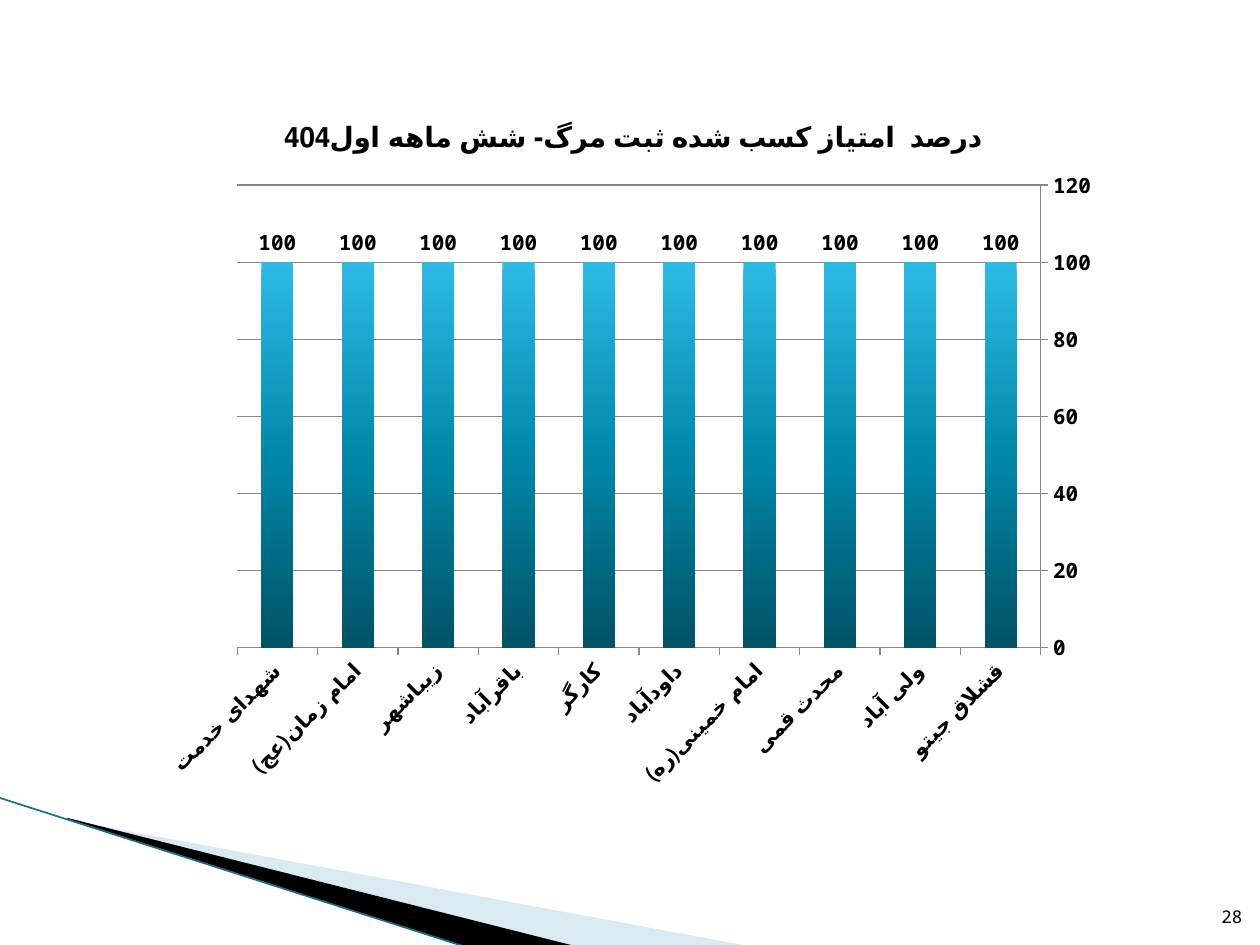
"""Build a slide with a column chart of death registration scores by centre."""
from copy import deepcopy

from lxml import etree
from pptx import Presentation
from pptx.chart.data import CategoryChartData
from pptx.dml.color import RGBColor
from pptx.enum import chart as ch, shapes, text
from pptx.oxml import parse_xml
from pptx.oxml.ns import nsdecls, qn
from pptx.util import Inches, Pt

FONT = "Noto Sans Mono"
HEADING = "درصد  امتیاز کسب شده ثبت مرگ- شش ماهه اول404"
CENTRES = ["قشلاق جیتو", "ولی آباد", "محدث قمی", "امام خمینی(ره)", "داودآباد",
           "کارگر", "باقرآباد", "زیباشهر", "امام زمان(عج)", "شهدای خدمت"]
SCORES = [100] * len(CENTRES)
PAGE = "28"
COLUMN_SHADES = [(0, "2DBBE5"), (0.5, "0088AA"), (1, "005266")]
WEDGES = [
    ([(0.55, 6.51), (5.95, 7.51), (4.56, 7.51), (0.55, 6.5)], "A0CBDC", 40),
    ([(0.53, 6.49), (4.57, 7.51), (3.72, 7.52), (0.54, 6.5)], "000000", 100),
]
EDGE = [(-0.01, 6.33), (3.71, 7.52)]
CHART_BOX = (1.22, 0.76, 7.62, 5.59)
PLOT_SHARES = {"x": 0.087, "y": 0.127, "w": 0.837, "h": 0.657}
PAGE_BOX = (9.46, 7.01, 0.4, 0.4)


def rgb(value):
    """Return the colour for a hex string."""
    return RGBColor.from_string(value)


def style(font, size, bold=False):
    """Apply the shared typeface and colour to a font."""
    font.name, font.size, font.bold = FONT, Pt(size), bold
    font.color.rgb = rgb("000000")


def add_wedge(slide, points, color, opacity):
    """Draw one filled sliver of the corner decoration."""
    start, *rest = [(Inches(x), Inches(y)) for x, y in points]
    builder = slide.shapes.build_freeform(*start)
    builder.add_line_segments(rest, close=True)
    wedge = builder.convert_to_shape()
    wedge.shadow.inherit = False
    wedge.fill.solid()
    wedge.fill.fore_color.rgb = rgb(color)
    wedge.line.fill.background()
    if opacity < 100:
        shade = wedge._element.spPr.find(".//" + qn("a:srgbClr"))
        etree.SubElement(shade, qn("a:alpha"), val=str(opacity * 1000))


def add_edge(slide):
    """Draw the thin line along the corner decoration."""
    ends = [Inches(v) for point in EDGE for v in point]
    edge = slide.shapes.add_connector(shapes.MSO_CONNECTOR.STRAIGHT, *ends)
    edge.line.color.rgb = rgb("1B6F84")
    edge.line.width = Pt(0.95)
    etree.SubElement(edge._element.spPr, qn("a:effectLst"))


def shade_columns(series):
    """Fill the columns with a top-to-bottom gradient."""
    fill = series.format.fill
    fill.gradient()
    fill.gradient_angle = 270
    stops = series._element.find(".//" + qn("a:gsLst"))
    stops.insert(1, deepcopy(stops[0]))
    for stop, (position, color) in zip(fill.gradient_stops, COLUMN_SHADES):
        stop.position = position
        stop.color.rgb = rgb(color)


def place_plot(chart):
    """Fix the inner plot area as shares of the chart."""
    sizes = "".join(f'<c:{k} val="{v}"/>' for k, v in PLOT_SHARES.items())
    layout = parse_xml(
        f'<c:layout {nsdecls("c")}><c:manualLayout><c:layoutTarget val="inner"/>'
        f'<c:xMode val="edge"/><c:yMode val="edge"/>{sizes}</c:manualLayout></c:layout>')
    area = chart._chartSpace.find(".//" + qn("c:plotArea"))
    for old in area.findall(qn("c:layout")):
        area.remove(old)
    area.insert(0, layout)


def add_scores(slide):
    """Add the column chart of scores."""
    data = CategoryChartData()
    data.categories = CENTRES
    data.add_series("Series 1", SCORES)
    chart = slide.shapes.add_chart(ch.XL_CHART_TYPE.COLUMN_CLUSTERED,
                                   *map(Inches, CHART_BOX), data).chart
    style(chart.font, 18)
    chart.has_legend = False
    chart.has_title = True
    heading = chart.chart_title.text_frame.paragraphs[0]
    heading.text = HEADING
    heading._p.get_or_add_pPr().set("rtl", "1")
    style(heading.font, 16, True)
    chart.chart_title.include_in_layout = False

    centres, scale = chart.category_axis, chart.value_axis
    for axis in (centres, scale):
        style(axis.tick_labels.font, 12, True)
        axis.major_tick_mark = ch.XL_TICK_MARK.OUTSIDE
        axis.format.line.color.rgb = rgb("878787")
    centres.reverse_order = True
    centres._element.find(".//" + qn("a:bodyPr")).set("rot", "-2700000")
    scale.minimum_scale, scale.maximum_scale, scale.major_unit = 0, 120, 20
    scale.major_gridlines.format.line.color.rgb = rgb("878787")

    plot = chart.plots[0]
    plot.gap_width = 150
    plot.vary_by_categories = False
    plot.has_data_labels = True
    plot.data_labels.show_value = True
    plot.data_labels.position = ch.XL_LABEL_POSITION.OUTSIDE_END
    style(plot.data_labels.font, 12, True)
    shade_columns(plot.series[0])
    place_plot(chart)


def add_page_number(slide):
    """Put the page number in the bottom right corner."""
    frame = slide.shapes.add_textbox(*map(Inches, PAGE_BOX)).text_frame
    frame.word_wrap = True
    frame.vertical_anchor = text.MSO_ANCHOR.BOTTOM
    frame.margin_left = frame.margin_right = 0
    number = frame.paragraphs[0]
    number.text = PAGE
    number.alignment = text.PP_ALIGN.RIGHT
    style(number.font, 10)


def main():
    """Assemble and save the slide."""
    deck = Presentation()
    deck.slide_width, deck.slide_height = Inches(10), Inches(7.5)
    slide = deck.slides.add_slide(deck.slide_layouts[6])
    for wedge in WEDGES:
        add_wedge(slide, *wedge)
    add_edge(slide)
    add_page_number(slide)
    add_scores(slide)
    deck.save("out.pptx")


if __name__ == "__main__":
    main()
